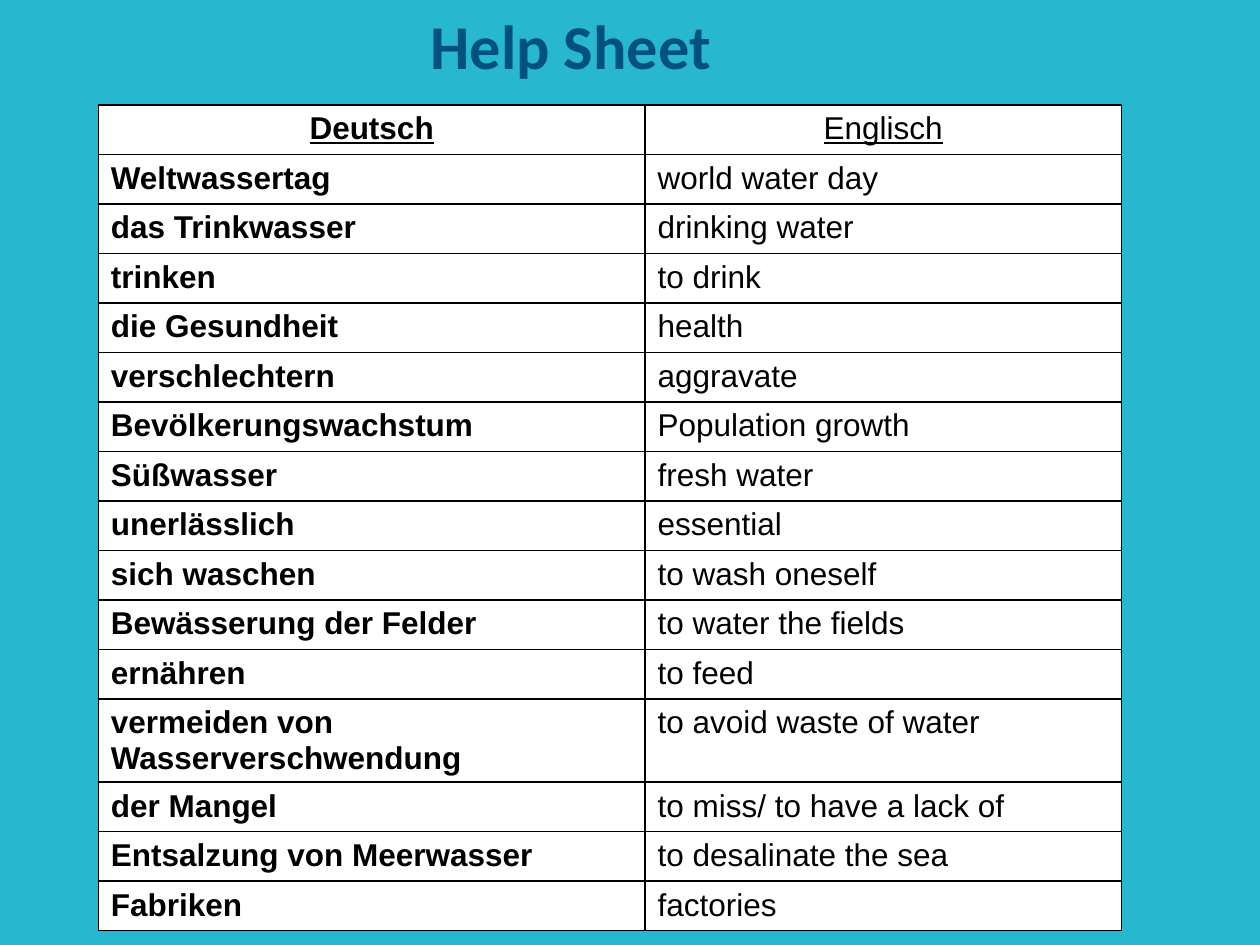
from dataclasses import dataclass

from lxml.etree import SubElement
from pptx import Presentation
from pptx.dml.color import RGBColor
from pptx.enum.text import MSO_ANCHOR, MSO_AUTO_SIZE, PP_ALIGN
from pptx.oxml.ns import qn
from pptx.util import Inches, Pt


@dataclass(frozen=True)
class Theme:
    background: str = "27B8CF"
    title: str = "00527D"
    ink: str = "000000"
    paper: str = "FFFFFF"
    title_font: str = "Calibri"
    body_font: str = "Arial"
    title_size: float = 35.6
    body_size: float = 18
    border: float = 1


VOCABULARY = [
    ("Deutsch", "Englisch"),
    ("Weltwassertag", "world water day"),
    ("das Trinkwasser", "drinking water"),
    ("trinken", "to drink"),
    ("die Gesundheit", "health"),
    ("verschlechtern", "aggravate"),
    ("Bevölkerungswachstum", "Population growth"),
    ("Süßwasser", "fresh water"),
    ("unerlässlich", "essential"),
    ("sich waschen", "to wash oneself"),
    ("Bewässerung der Felder", "to water the fields"),
    ("ernähren", "to feed"),
    ("vermeiden von Wasserverschwendung", "to avoid waste of water"),
    ("der Mangel", "to miss/ to have a lack of"),
    ("Entsalzung von Meerwasser", "to desalinate the sea"),
    ("Fabriken", "factories"),
]


def write(tf, text, *, font, size, color, bold=False, underline=False, align=PP_ALIGN.LEFT):
    p = tf.paragraphs[0]
    p.alignment = align
    r = p.add_run()
    r.text = text
    r.font.name = font
    r.font.size = Pt(size)
    r.font.color.rgb = RGBColor.from_string(color)
    r.font.bold = bold
    r.font.underline = underline


class HelpSheet:
    def __init__(self, prs, theme):
        self.theme = theme
        self.width, self.height = prs.slide_width, prs.slide_height
        self.s = prs.slides.add_slide(prs.slide_layouts[5])
        fill = self.s.background.fill
        fill.solid()
        fill.fore_color.rgb = RGBColor.from_string(theme.background)

    def x(self, percent):
        return round(self.width * percent / 100)

    def y(self, percent):
        return round(self.height * percent / 100)

    def title(self, text, left, top, width, height):
        sp = self.s.shapes.title
        sp.left, sp.top = self.x(left), self.y(top)
        sp.width, sp.height = self.x(width), self.y(height)
        tf = sp.text_frame
        tf.auto_size = MSO_AUTO_SIZE.NONE
        tf.vertical_anchor = MSO_ANCHOR.MIDDLE
        write(tf, text, font=self.theme.title_font, size=self.theme.title_size,
              color=self.theme.title, bold=True, align=PP_ALIGN.CENTER)

    def outline(self, cell):
        tc_pr = cell._tc.get_or_add_tcPr()
        for side in ("lnL", "lnR", "lnT", "lnB"):
            line = SubElement(tc_pr, qn(f"a:{side}"), w=str(Pt(self.theme.border)))
            SubElement(SubElement(line, qn("a:solidFill")), qn("a:srgbClr"), val=self.theme.ink)

    def table(self, rows, left, top, columns, row_height):
        table = self.s.shapes.add_table(
            len(rows), len(columns), self.x(left), self.y(top),
            self.x(sum(columns)), self.y(row_height * len(rows))).table
        table.first_row = table.horz_banding = False
        for column, width in zip(table.columns, columns):
            column.width = self.x(width)
        for i, row in enumerate(rows):
            header = i == 0
            for j, text in enumerate(row):
                cell = table.cell(i, j)
                self.outline(cell)
                cell.fill.solid()
                cell.fill.fore_color.rgb = RGBColor.from_string(self.theme.paper)
                write(cell.text_frame, text, font=self.theme.body_font,
                      size=self.theme.body_size, color=self.theme.ink,
                      bold=j == 0, underline=header,
                      align=PP_ALIGN.CENTER if header else PP_ALIGN.LEFT)


def main():
    prs = Presentation()
    prs.slide_width, prs.slide_height = Inches(10), Inches(7.5)
    sheet = HelpSheet(prs, Theme())
    sheet.title("Help Sheet", left=0.3, top=2.5, width=90, height=4.5)
    sheet.table(VOCABULARY, left=7.8, top=11.1, columns=(43.4, 37.8), row_height=5.24)
    prs.save("out.pptx")


if __name__ == "__main__":
    main()
